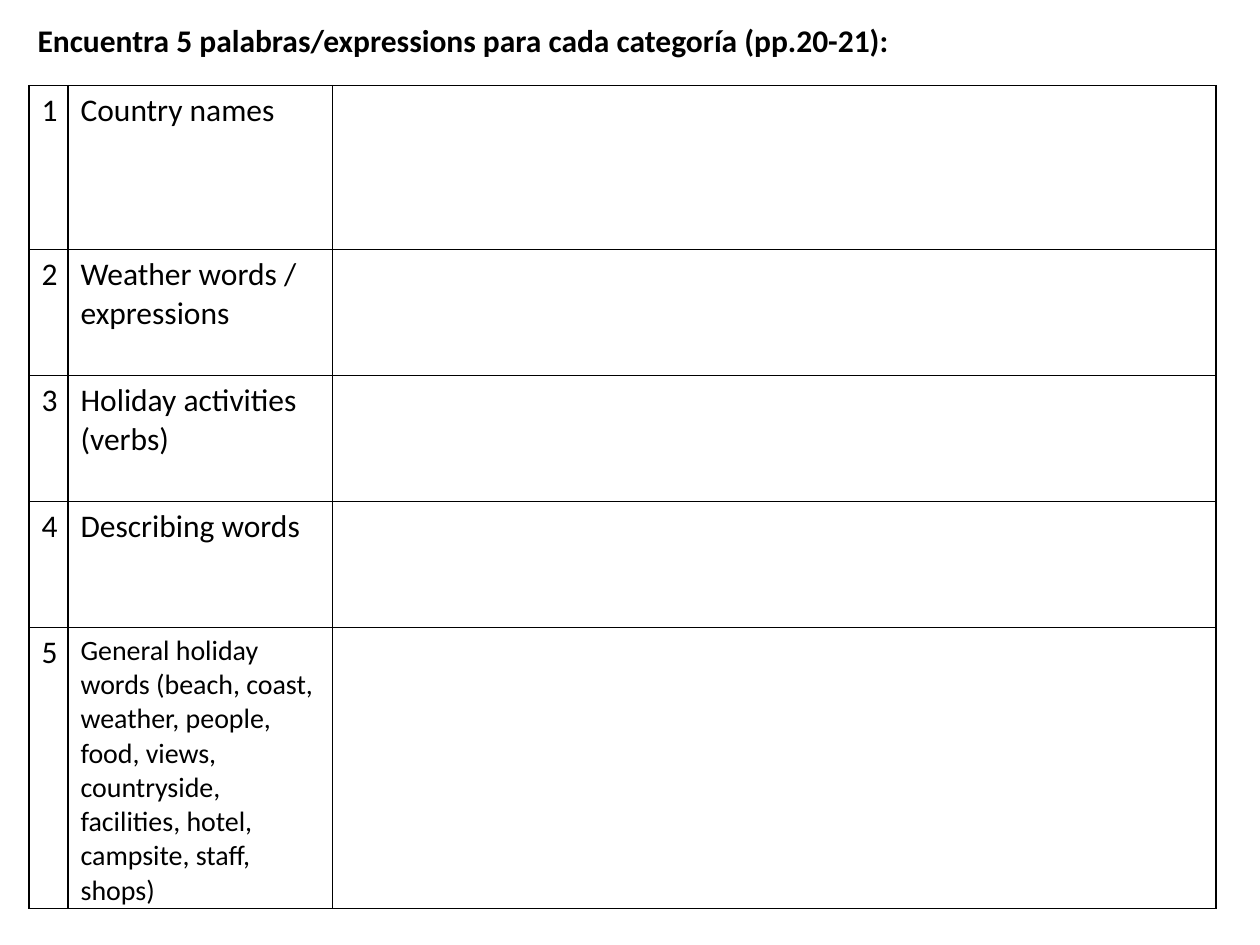
from lxml.etree import SubElement as Sub
from pptx import Presentation as Deck
from pptx.dml.color import RGBColor as Color
from pptx.oxml.ns import qn
from pptx.util import Inches, Pt

TITLE = "Encuentra 5 palabras/expressions para cada categoría (pp.20-21):"
TOPICS = [
    ("Country names", 18, 1.3),
    ("Weather words / expressions", 18, 1),
    ("Holiday activities (verbs)", 18, 1),
    ("Describing words", 18, 1),
    ("General holiday words (beach, coast, weather, people, food, views, "
     "countryside, facilities, hotel, campsite, staff, shops)", 16, 2.23),
]
COLS = [0.31, 2.1, 7.01]
HUES = {"ink": "000000", "page": "FFFFFF"}
FONT = "Calibri"


def write(frame, text, size, bold=False):
    run = frame.paragraphs[0].add_run()
    run.text = text
    font = run.font
    font.name, font.size, font.bold = FONT, Pt(size), bold
    font.color.rgb = Color.from_string(HUES["ink"])


def rule(cell):
    props = cell._tc.get_or_add_tcPr()
    for side in ("a:lnL", "a:lnR", "a:lnT", "a:lnB"):
        line = Sub(props, qn(side), w=str(Pt(1)))
        fill = Sub(line, qn("a:solidFill"))
        Sub(fill, qn("a:srgbClr"), val=HUES["ink"])


def main():
    deck = Deck()
    deck.slide_width, deck.slide_height = Inches(10), Inches(7.5)
    slide = deck.slides.add_slide(deck.slide_layouts[6])

    high = sum(topic[2] for topic in TOPICS)
    place = [Inches(n) for n in (0.23, 0.68, sum(COLS), high)]
    grid = slide.shapes.add_table(len(TOPICS), len(COLS), *place).table
    grid.first_row = grid.horz_banding = False
    for col, wide in zip(grid.columns, COLS):
        col.width = Inches(wide)

    for num, (row, (name, size, tall)) in enumerate(zip(grid.rows, TOPICS), 1):
        row.height = Inches(tall)
        for cell in row.cells:
            rule(cell)
            cell.fill.solid()
            cell.fill.fore_color.rgb = Color.from_string(HUES["page"])
            cell.margin_bottom = 0
        write(row.cells[0].text_frame, str(num), 18)
        write(row.cells[1].text_frame, name, size)

    box = slide.shapes.add_textbox(*[Inches(n) for n in (0.2, 0.12, 9.61, 0.4)])
    box.text_frame.word_wrap = True
    write(box.text_frame, TITLE, 18, True)

    deck.save("out.pptx")


if __name__ == "__main__":
    main()
